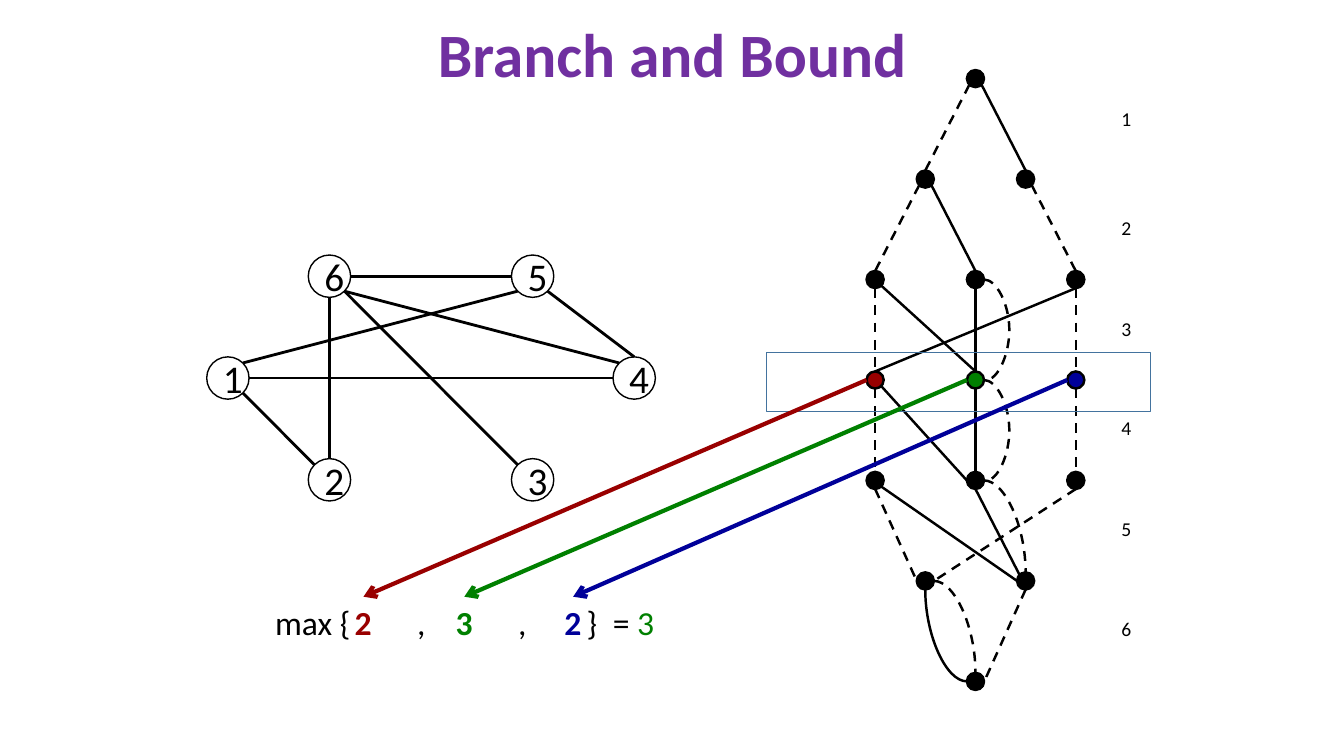
from collections import namedtuple

from lxml import etree
from pptx import Presentation
from pptx.dml.color import RGBColor
from pptx.enum.dml import MSO_LINE
from pptx.enum.shapes import MSO_CONNECTOR, MSO_SHAPE
from pptx.enum.text import MSO_ANCHOR, PP_ALIGN
from pptx.oxml.ns import qn
from pptx.util import Inches, Pt

STRAIGHT, CURVE = MSO_CONNECTOR.STRAIGHT, MSO_CONNECTOR.CURVE
OVAL, RECTANGLE = MSO_SHAPE.OVAL, MSO_SHAPE.RECTANGLE
DASH = MSO_LINE.DASH
CENTER, LEFT = PP_ALIGN.CENTER, PP_ALIGN.LEFT
TOP, MIDDLE = MSO_ANCHOR.TOP, MSO_ANCHOR.MIDDLE

COLORS = {"title": "7030A0", "ink": "000000", "frame": "43739E",
          "red": "990000", "green": "008000", "blue": "000099"}
FONT = "Calibri"
DIAGONAL = 0.71
SITES = {"n": (0, -1), "s": (0, 1), "w": (-1, 0), "e": (1, 0),
         "nw": (-DIAGONAL, -DIAGONAL), "ne": (DIAGONAL, -DIAGONAL),
         "sw": (-DIAGONAL, DIAGONAL), "se": (DIAGONAL, DIAGONAL)}

Box = namedtuple("Box", "left top width height")

# Vertex label: column and row on the grid of the graph
VERTICES = {"1": (0, 1), "2": (1, 2), "4": (4, 1),
            "3": (3, 2), "5": (3, 0), "6": (1, 0)}
GRAPH_EDGES = ["2nw 1se", "4w 1e", "5sw 1ne", "6s 2n",
               "3nw 6se", "4n 5se", "4nw 6se", "5w 6e"]

# Diagram states: a letter for the layer and the column on the half-step grid
LAYERS = {"A": [2], "B": [1, 3], "C": [0, 2, 4], "D": [0, 2, 4],
          "E": [0, 2, 4], "F": [1, 3], "G": [2]}
STATE_COLORS = {"D0": "red", "D2": "green", "D4": "blue"}
SOLID_ARCS = ["A2se B3n", "B1se C2n", "C0se D2n", "C4se D0n", "C2s D2n",
              "D0se E2w", "D2s E2n", "E0se F3w", "E2s F3nw"]
DASHED_ARCS = ["A2sw B1n", "B1sw C0n", "B3se C4n", "C0s D0n", "C4s D4n",
               "D0s E0n", "D4s E4n", "E0s F1w", "E4s F1e", "F3s G2se"]
DASHED_BENDS = ["E2e F3n", "F1e G2n"]
SOLID_BENDS = ["G2w F1s"]
DASHED_BULGES = ["C2e D2e", "D2e E2e"]
BULGE = 0.25
BULGE_WIDTH = 0.02
LABEL_TOPS = [1.01, 2.09, 3.09, 4.08, 5.08, 6.07]

# Bound: state it comes from, its value and the left edge of that value
BOUNDS = [("D0", "2", 3.42), ("D2", "3", 4.42), ("D4", "2", 5.5)]
BOUND_WIDTH = 0.37
FORMULA_TABS = [1.41, 2.41, 3.09, 3.35]


def rgb(color):
    return RGBColor.from_string(COLORS[color])


def write_runs(frame, runs, size, align=LEFT, anchor=TOP, bold=False):
    frame.word_wrap = True
    frame.vertical_anchor = anchor
    paragraph = frame.paragraphs[0]
    paragraph.alignment = align
    for wording, color in runs:
        run = paragraph.add_run()
        run.text = wording
        for attribute, value in {"name": FONT, "size": Pt(size), "bold": bold}.items():
            setattr(run.font, attribute, value)
        run.font.color.rgb = rgb(color)
    return paragraph


def add_label(slide, box, runs, size, **layout):
    label = slide.shapes.add_textbox(*map(Inches, box))
    return write_runs(label.text_frame, runs, size, **layout)


def add_outline(slide, kind, box, line_color, line_width, fill=None):
    outline = slide.shapes.add_shape(kind, *map(Inches, box))
    outline.shadow.inherit = False
    if fill:
        outline.fill.solid()
        outline.fill.fore_color.rgb = rgb(fill)
    else:
        outline.fill.background()
    outline.line.color.rgb = rgb(line_color)
    outline.line.width = Pt(line_width)
    return outline


def add_line(slide, start, end, width, color="ink", dashed=False, kind=STRAIGHT):
    line = slide.shapes.add_connector(kind, *map(Inches, (*start, *end)))
    line.line.color.rgb = rgb(color)
    line.line.width = Pt(width)
    if dashed:
        line.line.dash_style = DASH
    etree.SubElement(line._element.spPr, qn("a:effectLst"))
    return line


def add_bend(slide, start, end, width, dashed):
    """Quarter curve that leaves its start sideways and meets its end upright."""
    bend = add_line(slide, start, end, width, dashed=dashed, kind=CURVE)
    bend._element.spPr.find(qn("a:prstGeom")).set("prst", "curvedConnector2")


def add_bulge(slide, start, end, width):
    """Dashed curve that swings out to the right between two stacked states."""
    end = (end[0] + BULGE_WIDTH, end[1])
    bulge = add_line(slide, start, end, width, dashed=True, kind=CURVE)
    guides = bulge._element.spPr.find(qn("a:prstGeom")).get_or_add_avLst()
    ratio = round(BULGE / BULGE_WIDTH * 100000)
    etree.SubElement(guides, qn("a:gd"), name="adj1", fmla=f"val {ratio}")


def circle_box(center, radius):
    return Box(center[0] - radius, center[1] - radius, 2 * radius, 2 * radius)


def site(centers, radius, key, side):
    (x, y), (dx, dy) = centers[key], SITES[side]
    return x + dx * radius, y + dy * radius


def edge_ends(edge, centers, radius, key_length):
    return [site(centers, radius, end[:key_length], end[key_length:])
            for end in edge.split()]


def draw_title(slide, box):
    title = add_label(slide, box, [("Branch and Bound", "title")], 44,
                      align=CENTER, anchor=MIDDLE, bold=True)
    title.line_spacing = 0.9


def draw_graph(slide, box, radius=0.21):
    """Graph whose outermost vertex centres lie on the edges of the box."""
    centers = {label: (box.left + column * box.width / 4, box.top + row * box.height / 2)
               for label, (column, row) in VERTICES.items()}
    for label, center in centers.items():
        vertex = add_outline(slide, OVAL, circle_box(center, radius), "ink", 1)
        write_runs(vertex.text_frame, [(label, "ink")], 28, align=CENTER, anchor=MIDDLE)
    for edge in GRAPH_EDGES:
        add_line(slide, *edge_ends(edge, centers, radius, 1), 2)


def draw_diagram(slide, box, radius=0.085, width=1.75):
    """Decision diagram in the box; returns the left point of each state."""
    centers = {f"{layer}{column}": (box.left + column * box.width / 4,
                                    box.top + row * box.height / 6)
               for row, (layer, columns) in enumerate(LAYERS.items())
               for column in columns}
    for state, center in centers.items():
        add_outline(slide, OVAL, circle_box(center, radius), "ink", width,
                    STATE_COLORS.get(state, "ink"))
    for arcs, dashed in ((SOLID_ARCS, False), (DASHED_ARCS, True)):
        for arc in arcs:
            add_line(slide, *edge_ends(arc, centers, radius, 2), width, dashed=dashed)
    for bends, dashed in ((SOLID_BENDS, False), (DASHED_BENDS, True)):
        for bend in bends:
            add_bend(slide, *edge_ends(bend, centers, radius, 2), width, dashed)
    for bulge in DASHED_BULGES:
        add_bulge(slide, *edge_ends(bulge, centers, radius, 2), width)
    for number, top in enumerate(LABEL_TOPS, start=1):
        add_label(slide, Box(box.left + 2.3, top, 0.4, 0.34), [(f" {number}", "ink")], 14)
    return {state: site(centers, radius, state, "w") for state in centers}


def draw_bounds(slide, box, sources):
    """Formula in the box, with an arrow from each coloured state to its value."""
    formula = add_label(slide, box, [("max {\t,\t,\t}\t= ", "ink"), ("3", "green")], 24)
    stops = etree.SubElement(formula._p.get_or_add_pPr(), qn("a:tabLst"))
    for position in FORMULA_TABS:
        etree.SubElement(stops, qn("a:tab"), pos=str(Inches(position)), algn="l")
    for state, value, left in BOUNDS:
        color = STATE_COLORS[state]
        arrow = add_line(slide, sources[state], (left + BOUND_WIDTH / 2, box.top), 3, color)
        etree.SubElement(arrow.line._get_or_add_ln(), qn("a:tailEnd"), type="arrow")
        add_label(slide, Box(left, box.top, BOUND_WIDTH, box.height),
                  [(value, color)], 24, bold=True)


def main():
    deck = Presentation()
    deck.slide_width, deck.slide_height = Inches(13.33), Inches(7.5)
    slide = deck.slides.add_slide(deck.slide_layouts[6])
    draw_title(slide, Box(0.92, 0.12, 11.5, 0.91))
    draw_graph(slide, Box(2.26, 2.74, 4.03, 2.02))
    sources = draw_diagram(slide, Box(8.68, 0.78, 1.99, 5.98))
    add_outline(slide, RECTANGLE, Box(7.6, 3.5, 3.81, 0.58), "frame", 1)
    draw_bounds(slide, Box(2.63, 5.92, 3.98, 0.5), sources)
    deck.save("out.pptx")


if __name__ == "__main__":
    main()
